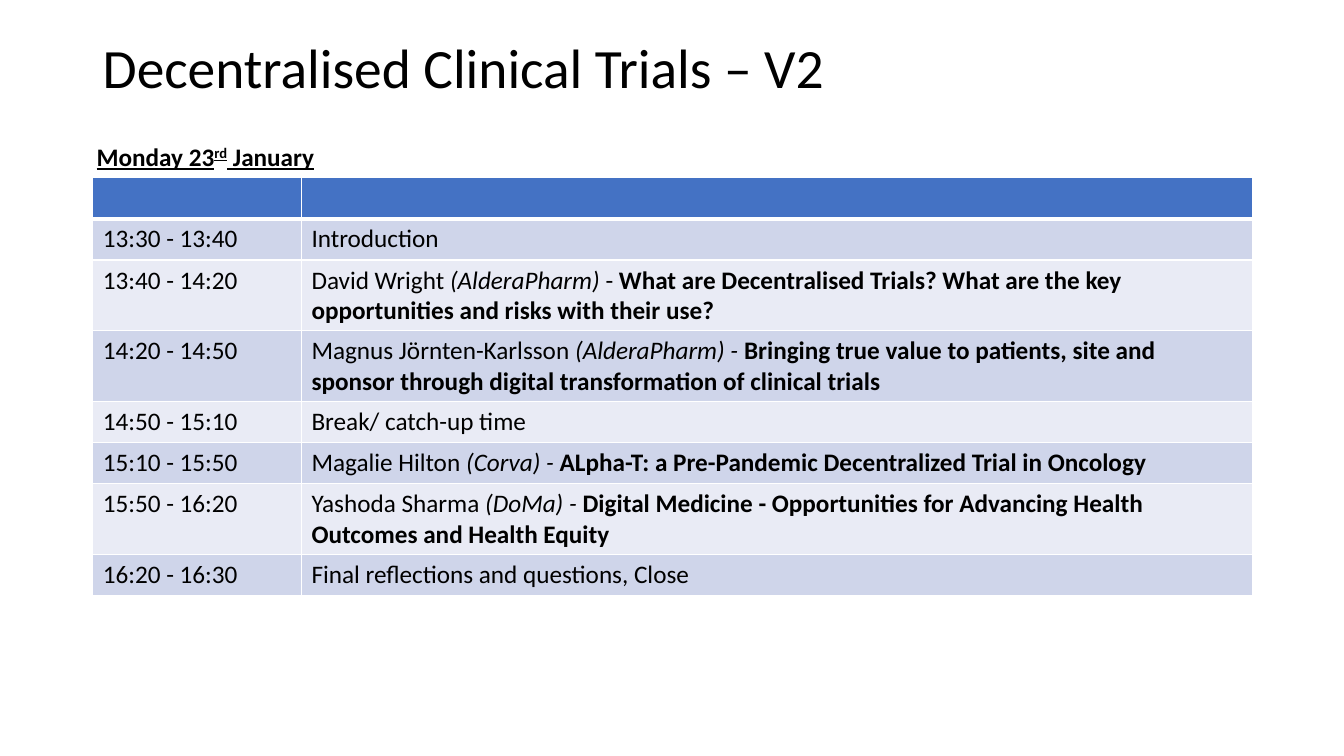
from dataclasses import dataclass

from lxml.etree import SubElement
from pptx import Presentation
from pptx.dml.color import RGBColor
from pptx.enum.text import MSO_ANCHOR
from pptx.oxml.ns import qn
from pptx.util import Inches, Pt


@dataclass(frozen=True)
class Theme:
    font: str = "Calibri"
    text: str = "000000"
    header: str = "4472C4"
    bands: tuple = ("CFD5EA", "E9EBF5")
    border: str = "FFFFFF"
    title_size: float = 39.6
    body_size: float = 18
    thin: float = 1
    thick: float = 3


AGENDA = [
    ("13:30 - 13:40", [("Introduction", {})]),
    ("13:40 - 14:20", [
        ("David Wright ", {}),
        ("(AlderaPharm) ", {"italic": True}),
        ("- ", {}),
        ("What are Decentralised Trials? What are the key opportunities "
         "and risks with their use?", {"bold": True}),
    ]),
    ("14:20 - 14:50", [
        ("Magnus Jörnten-Karlsson ", {}),
        ("(AlderaPharm) - ", {"italic": True}),
        ("Bringing true value to patients, site and sponsor through digital "
         "transformation of clinical trials", {"bold": True}),
    ]),
    ("14:50 - 15:10", [("Break/ catch-up time", {})]),
    ("15:10 - 15:50", [
        ("Magalie Hilton ", {}),
        ("(Corva) - ", {"italic": True}),
        ("ALpha-T: a Pre-Pandemic Decentralized Trial in Oncology", {"bold": True}),
    ]),
    ("15:50 - 16:20", [
        ("Yashoda Sharma ", {}),
        ("(DoMa) - ", {"italic": True}),
        ("Digital Medicine - Opportunities for Advancing Health Outcomes "
         "and Health Equity", {"bold": True}),
    ]),
    ("16:20 - 16:30", [("Final reflections and questions, Close", {})]),
]


def add_span(para, text, *, theme, size=None, bold=False, italic=False,
             underline=False, baseline=None):
    span = para.add_run()
    span.text = text
    font = span.font
    font.name = theme.font
    font.size = Pt(size or theme.body_size)
    font.bold = bold
    font.italic = italic
    font.underline = underline
    font.color.rgb = RGBColor.from_string(theme.text)
    if baseline:
        span.font._element.set("baseline", str(baseline * 1000))


class SlideBuilder:
    def __init__(self, deck, theme):
        self.theme = theme
        self.page = deck.slides.add_slide(deck.slide_layouts[6])

    def text(self, left, top, width, height, spans, line_spacing=None, inset_top=0.05):
        box = self.page.shapes.add_textbox(
            Inches(left), Inches(top), Inches(width), Inches(height))
        frame = box.text_frame
        frame.word_wrap = True
        frame.vertical_anchor = MSO_ANCHOR.TOP
        frame.margin_top = Inches(inset_top)
        para = frame.paragraphs[0]
        if line_spacing:
            para.line_spacing = line_spacing
        for text, style in spans:
            add_span(para, text, theme=self.theme, **style)

    def cell(self, cell, color, spans=(), bottom=None):
        theme = self.theme
        for text, style in spans:
            add_span(cell.text_frame.paragraphs[0], text, theme=theme, **style)
        properties = cell._tc.get_or_add_tcPr()
        for side in ("lnL", "lnR", "lnT", "lnB"):
            weight = bottom if side == "lnB" and bottom else theme.thin
            line = SubElement(properties, qn(f"a:{side}"), w=str(Pt(weight)))
            fill = SubElement(line, qn("a:solidFill"))
            SubElement(fill, qn("a:srgbClr"), val=theme.border)
        cell.fill.solid()
        cell.fill.fore_color.rgb = RGBColor.from_string(color)

    def agenda(self, left, top, widths, height, row_height, entries):
        theme = self.theme
        frame = self.page.shapes.add_table(
            len(entries) + 1, len(widths), Inches(left), Inches(top),
            Inches(sum(widths)), Inches(height))
        table = frame.table
        for column, width in zip(table.columns, widths):
            column.width = Inches(width)
        for row in table.rows:
            row.height = Inches(row_height)
        frame.height = Inches(height)
        for column in range(len(widths)):
            self.cell(table.cell(0, column), theme.header, bottom=theme.thick)
        for index, (time, session) in enumerate(entries):
            color = theme.bands[index % 2]
            self.cell(table.cell(index + 1, 0), color, [(time, {})])
            self.cell(table.cell(index + 1, 1), color, session)


def main():
    deck = Presentation()
    deck.slide_width = Inches(13.33)
    deck.slide_height = Inches(7.5)
    theme = Theme()
    builder = SlideBuilder(deck, theme)
    builder.text(0.92, 0.4, 11.5, 1.22,
                 [("Decentralised Clinical Trials – V2", {"size": theme.title_size})],
                 line_spacing=0.9, inset_top=0)
    builder.agenda(0.92, 1.76, (2.07, 9.43), 4.13, 0.41, AGENDA)
    heading = {"bold": True, "underline": True}
    builder.text(0.86, 1.35, 6.76, 0.4, [
        ("Monday 23", heading),
        ("rd", {**heading, "baseline": 30}),
        (" January", heading),
    ])
    deck.save("out.pptx")


if __name__ == "__main__":
    main()
